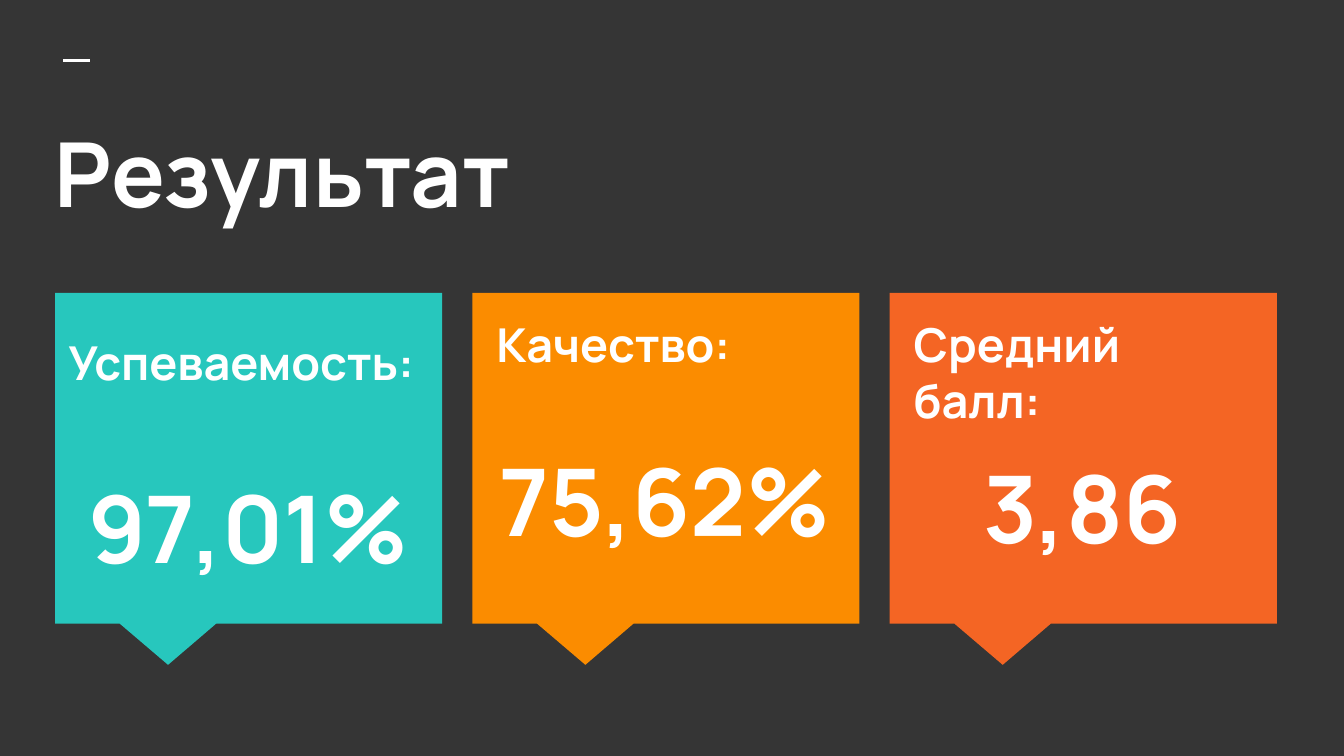
"""Build the results slide with three callout cards."""
from lxml.etree import SubElement
from pptx import Presentation
from pptx.dml.color import RGBColor
from pptx.enum.shapes import MSO_CONNECTOR as Connector, MSO_SHAPE as Shape
from pptx.enum.text import MSO_ANCHOR as Anchor, PP_ALIGN as Align
from pptx.oxml.ns import qn
from pptx.util import Inches, Pt

TITLE = "Результат"
RESULTS = [
    {"label": "Успеваемость:", "value": "97,01%", "fill": "27C7BD", "gap": 43, "inside": True},
    {"label": "Качество:", "value": "75,62%", "fill": "FB8C00", "gap": 38, "inside": False},
    {"label": "Средний балл:", "value": "3,86", "fill": "F46524", "gap": 12, "inside": False},
]
BACKGROUND, WHITE, FONT = "353535", "FFFFFF", "Manrope"
SLIDE_WIDTH = 10
SLIDE_HEIGHT = SLIDE_WIDTH * 9 / 16
CARD_LEFT, CARDS_RIGHT, CARD_TOP, CARD_WIDTH, CARD_HEIGHT = 0.41, 9.5, 2.18, 2.88, 2.46
CARD_STEP = (CARDS_RIGHT - CARD_WIDTH - CARD_LEFT) / (len(RESULTS) - 1)
CALLOUT_TIP = (-0.208, 0.625)
FRAME = {"word_wrap": True, **{f"margin_{side}": Inches(0.1) for side in ("left", "top", "right", "bottom")}}


def color(hex_value):
    return RGBColor.from_string(hex_value)


def set_format(target, values):
    for name, value in values.items():
        setattr(target, name, value)


def write(frame, lines, anchor=Anchor.TOP):
    set_format(frame, {**FRAME, "vertical_anchor": anchor})
    for index, (text, size, spacing) in enumerate(lines):
        paragraph = frame.add_paragraph() if index else frame.paragraphs[0]
        set_format(paragraph, {"alignment": Align.LEFT, **spacing})
        run = paragraph.add_run()
        run.text = text
        set_format(run.font, {"name": FONT, "size": Pt(size), "bold": True})
        run.font.color.rgb = color(WHITE)


def add_text(slide, box, lines):
    write(slide.shapes.add_textbox(*map(Inches, box)).text_frame, lines)


def add_card(slide, left, result):
    card = slide.shapes.add_shape(
        Shape.RECTANGULAR_CALLOUT, *map(Inches, (left, CARD_TOP, CARD_WIDTH, CARD_HEIGHT)))
    card.shadow.inherit = False
    card.fill.solid()
    card.fill.fore_color.rgb = color(result["fill"])
    card.line.fill.background()
    for index, offset in enumerate(CALLOUT_TIP):
        card.adjustments[index] = offset
    value_spacing = {"alignment": Align.CENTER, "space_before": Pt(result["gap"]), "space_after": Pt(12)}
    lines = [(result["label"], 25, {}), (result["value"], 50, value_spacing)]
    if result["inside"]:
        write(card.text_frame, lines, Anchor.MIDDLE)
    else:
        add_text(slide, (left + 0.08, CARD_TOP + 0.07, 2.71, 2.19), lines)


def add_dash(slide):
    dash = slide.shapes.add_connector(Connector.STRAIGHT, *map(Inches, (0.47, 0.45, 0.67, 0.45)))
    dash.line.color.rgb = color(WHITE)
    dash.line.width = Pt(1.5)
    SubElement(dash.element.spPr, qn("a:effectLst"))


def main():
    deck = Presentation()
    set_format(deck, {"slide_width": Inches(SLIDE_WIDTH), "slide_height": Inches(SLIDE_HEIGHT)})
    slide = deck.slides.add_slide(deck.slide_layouts[6])
    slide.background.fill.solid()
    slide.background.fill.fore_color.rgb = color(BACKGROUND)
    add_dash(slide)
    add_text(slide, (0.31, 0.78, 9.43, 1.12), [(TITLE, 48, {})])
    for index, result in enumerate(RESULTS):
        add_card(slide, CARD_LEFT + index * CARD_STEP, result)
    deck.save("out.pptx")


if __name__ == "__main__":
    main()
